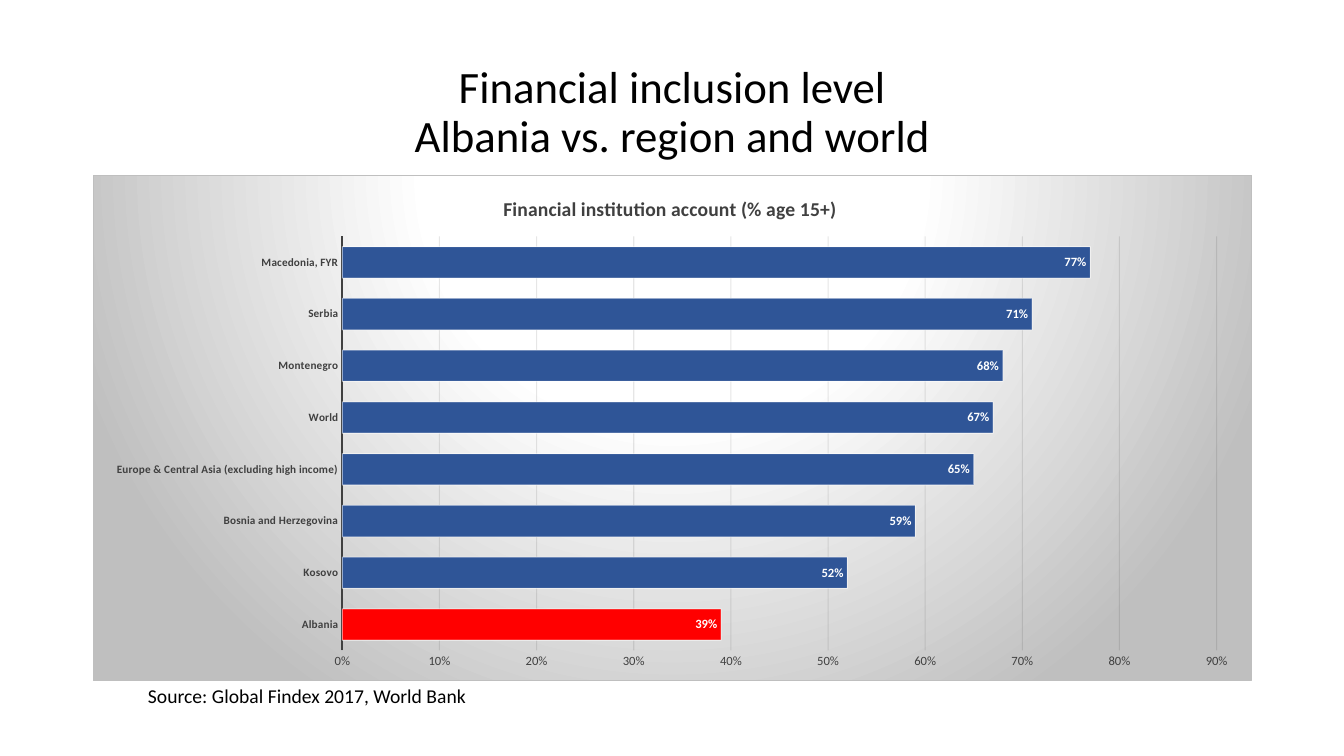
from copy import deepcopy

from lxml import etree
from pptx import Presentation
from pptx import util as u
from pptx.chart.data import CategoryChartData
from pptx.dml.color import RGBColor
from pptx.enum import chart as ch, text
from pptx.oxml import parse_xml
from pptx.oxml.ns import nsdecls, qn

FACE = "Calibri"
COLOURS = {
    "ink": "000000",
    "label": "404040",
    "paper": "FFFFFF",
    "edge": "BFBFBF",
    "grid": "0D0D0D",
    "bar": "2F5597",
    "albania": "FF0000",
}
INDICATOR = "Financial institution account (% age 15+) "
ACCOUNTS = {
    "Albania": 0.39,
    "Kosovo": 0.52,
    "Bosnia and Herzegovina": 0.59,
    "Europe & Central Asia (excluding high income)": 0.65,
    "World": 0.67,
    "Montenegro": 0.68,
    "Serbia": 0.71,
    "Macedonia, FYR": 0.77,
}


def rgb(name):
    return RGBColor.from_string(COLOURS[name])


def style_font(font, size, colour="ink", bold=False):
    font.name, font.size, font.bold = FACE, u.Pt(size), bold
    font.color.rgb = rgb(colour)


def write(frame, words, size, colour="ink", bold=False, align=None, spacing=None):
    paragraph = frame.paragraphs[0]
    paragraph.text = words
    paragraph.alignment = align
    paragraph.line_spacing = spacing
    for run in paragraph.runs:
        style_font(run.font, size, colour, bold)
    for line_break in paragraph._p.findall(qn("a:br")):
        line_break.insert(0, deepcopy(paragraph.runs[0].font._element))


def style_line(line, colour, width, opacity=100):
    line.color.rgb = rgb(colour)
    line.width = u.Pt(width)
    if opacity < 100:
        for tone in line._get_or_add_ln().iter(qn("a:srgbClr")):
            etree.SubElement(tone, qn("a:alpha")).set("val", str(opacity * 1000))


def place_heading(heading, box):
    heading.left, heading.top, heading.width, heading.height = box
    frame = heading.text_frame
    frame.auto_size = text.MSO_AUTO_SIZE.NONE
    frame.vertical_anchor = text.MSO_ANCHOR.MIDDLE
    write(frame, "Financial inclusion level\vAlbania vs. region and world", 32,
          align=text.PP_ALIGN.CENTER, spacing=0.9)


def fill_background(chart):
    stops = "".join(
        f'<a:gs pos="{position * 1000}"><a:srgbClr val="{COLOURS[name]}"/></a:gs>'
        for position, name in ((0, "paper"), (39, "paper"), (100, "edge")))
    background = parse_xml(
        f'<c:spPr {nsdecls("c", "a")}><a:gradFill><a:gsLst>{stops}</a:gsLst>'
        '<a:path path="circle"><a:fillToRect l="50000" t="-80000" r="50000" b="180000"/>'
        f'</a:path></a:gradFill><a:ln w="{u.Pt(0.75)}"><a:solidFill>'
        f'<a:srgbClr val="{COLOURS["edge"]}"/></a:solidFill></a:ln></c:spPr>')
    chart._chartSpace.find(qn("c:chart")).addnext(background)


def fix_plot_area(chart, x, y, w, h):
    plot_area = chart._chartSpace.find(f'{qn("c:chart")}/{qn("c:plotArea")}')
    for layout in plot_area.findall(qn("c:layout")):
        plot_area.remove(layout)
    sizes = "".join(f'<c:{side} val="{share}"/>'
                    for side, share in (("x", x), ("y", y), ("w", w), ("h", h)))
    plot_area.insert(0, parse_xml(
        f'<c:layout {nsdecls("c")}><c:manualLayout><c:layoutTarget val="inner"/>'
        f'<c:xMode val="edge"/><c:yMode val="edge"/>{sizes}'
        '</c:manualLayout></c:layout>'))


def style_axes(chart):
    countries, shares = chart.category_axis, chart.value_axis
    for axis in (countries, shares):
        axis.major_tick_mark = axis.minor_tick_mark = ch.XL_TICK_MARK.NONE
    style_font(countries.tick_labels.font, 8, "label", bold=True)
    style_line(countries.format.line, "label", 1.5)
    countries.has_major_gridlines = False

    style_font(shares.tick_labels.font, 9, "label")
    shares.tick_labels.number_format = "0%"
    shares.tick_labels.number_format_is_linked = False
    shares.minimum_scale, shares.maximum_scale, shares.major_unit = 0, 0.9, 0.1
    shares.format.line.fill.background()
    shares.has_major_gridlines = True
    style_line(shares.major_gridlines.format.line, "grid", 0.75, opacity=10)


def style_bars(plot):
    plot.gap_width = 65
    plot.vary_by_categories = False
    accounts = plot.series[0]
    accounts.invert_if_negative = False
    albania = accounts.points[list(ACCOUNTS).index("Albania")]
    for bar, colour in ((accounts, "bar"), (albania, "albania")):
        bar.format.fill.solid()
        bar.format.fill.fore_color.rgb = rgb(colour)
        style_line(bar.format.line, "paper", 0.75, opacity=50)
    labels = accounts.data_labels
    labels.show_value = True
    labels.position = ch.XL_LABEL_POSITION.INSIDE_END
    labels.number_format, labels.number_format_is_linked = "0%", False
    style_font(labels.font, 9, "paper", bold=True)


def add_account_chart(slide, box):
    data = CategoryChartData(number_format="0%")
    data.categories = list(ACCOUNTS)
    data.add_series(INDICATOR, list(ACCOUNTS.values()))
    chart = slide.shapes.add_chart(ch.XL_CHART_TYPE.BAR_CLUSTERED, *box, data).chart
    style_font(chart.font, 10)
    chart.has_legend = False
    chart.has_title = True
    write(chart.chart_title.text_frame, INDICATOR, 14, "label", bold=True)
    chart.chart_title.include_in_layout = False
    style_axes(chart)
    style_bars(chart.plots[0])
    fix_plot_area(chart, 0.215, 0.12, 0.755, 0.82)
    fill_background(chart)


def add_source_line(slide, box):
    frame = slide.shapes.add_textbox(*box).text_frame
    frame.word_wrap = False
    frame.auto_size = text.MSO_AUTO_SIZE.SHAPE_TO_FIT_TEXT
    write(frame, "Source: Global Findex 2017, World Bank", 14,
          align=text.PP_ALIGN.JUSTIFY, spacing=1.07)


def main():
    deck = Presentation()
    deck.slide_width, deck.slide_height = u.Cm(33.87), u.Cm(19.05)
    slide = deck.slides.add_slide(deck.slide_layouts.get_by_name("Title Only"))
    left, width = u.Cm(2.34), u.Cm(29.21)
    place_heading(slide.shapes.title, (left, u.Cm(1.02), width, u.Cm(3.68)))
    add_account_chart(slide, (left, u.Cm(4.42), width, u.Cm(12.75)))
    add_source_line(slide, (u.Cm(3.48), u.Cm(17.07), u.Cm(8.61), u.Cm(0.89)))
    deck.save("out.pptx")


if __name__ == "__main__":
    main()
